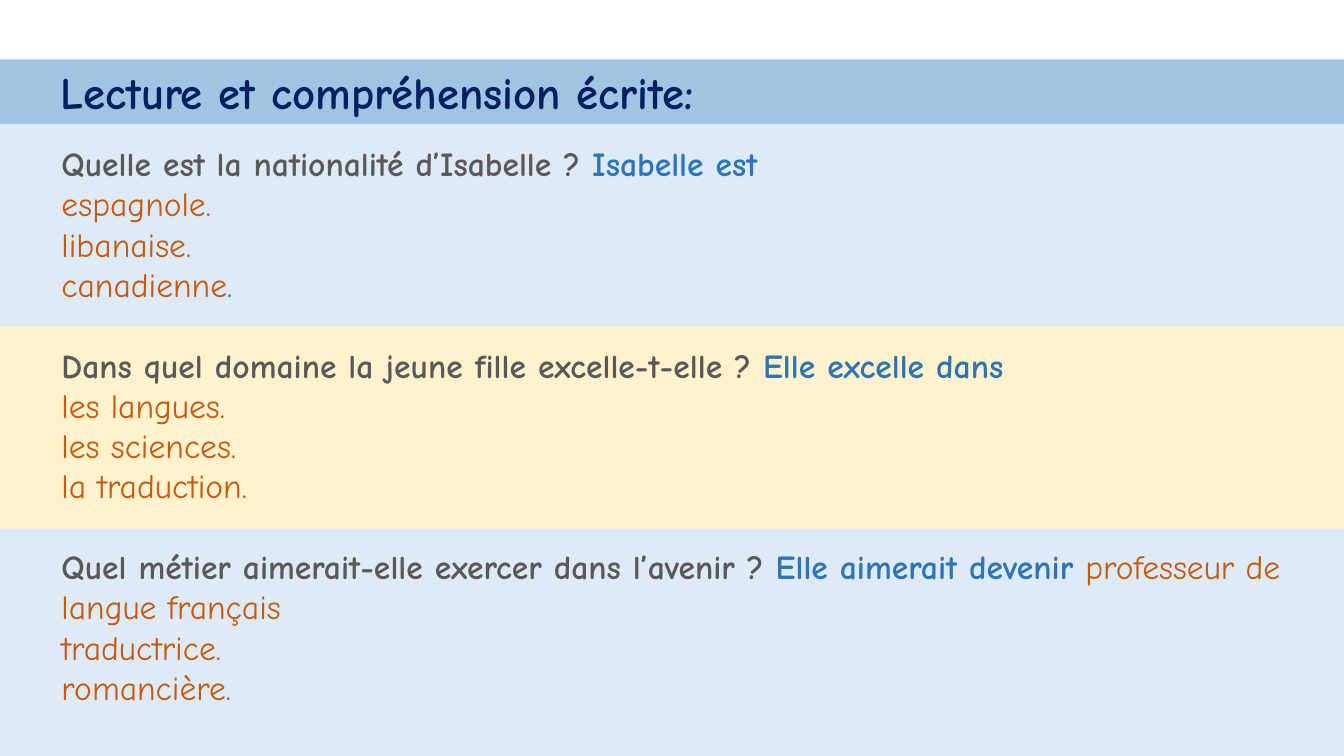
from pptx import Presentation
from pptx.dml.color import RGBColor
from pptx.enum.shapes import MSO_SHAPE as Shape
from pptx.enum.text import MSO_ANCHOR as Anchor, PP_ALIGN as Align
from pptx.util import Cm, Pt

PALE_BLUE = RGBColor(0xDE, 0xEB, 0xF7)
CREAM = RGBColor(0xFF, 0xF2, 0xCC)
SKY = RGBColor(0xA1, 0xC4, 0xE3)
NAVY = RGBColor(0x00, 0x20, 0x60)
GREY = RGBColor(0x59, 0x59, 0x59)
BLUE = RGBColor(0x2E, 0x75, 0xB6)
ORANGE = RGBColor(0xC5, 0x5A, 0x11)

WIDTH, HEIGHT = 33.87, 19.05
BAND_TOP, BAND_STEP = 3.12, 5.1
TEXT_TOP, TEXT_STEP = 3.35, 5.08
FRAME = {"word_wrap": True, "margin_left": Cm(1.52), "margin_right": Cm(0.25),
         "margin_top": Cm(0.25), "margin_bottom": Cm(0.25)}

# Each question is a list of lines; each line a list of (text, colour, bold)
QUESTIONS = [
    (PALE_BLUE, [
        [("Quelle est la nationalité d’Isabelle ? ", GREY, True),
         ("Isabelle est", BLUE, True)],
        [("espagnole.", ORANGE, False)],
        [("libanaise.", ORANGE, False)],
        [("canadienne", ORANGE, False), (".", BLUE, False)]]),
    (CREAM, [
        [("Dans quel domaine la jeune fille excelle-t-elle ? ", GREY, True),
         ("Elle excelle dans", BLUE, True)],
        [("les langues.", ORANGE, False)],
        [("les sciences.", ORANGE, False)],
        [("la traduction.", ORANGE, False)]]),
    (PALE_BLUE, [
        [("Quel métier aimerait-elle exercer dans l’avenir ? ", GREY, True),
         ("Elle aimerait devenir ", BLUE, True),
         ("professeur de langue français", ORANGE, False)],
        [("traductrice.", ORANGE, False)],
        [("romancière.", ORANGE, False)]]),
]

deck = Presentation()
deck.slide_width, deck.slide_height = Cm(WIDTH), Cm(HEIGHT)
page = deck.slides.add_slide(deck.slide_layouts[6])


def add_band(top, height, colour):
    band = page.shapes.add_shape(Shape.RECTANGLE, 0, Cm(top), Cm(WIDTH), Cm(height))
    band.shadow.inherit = False
    band.fill.solid()
    band.fill.fore_color.rgb = colour
    band.line.fill.background()
    return band


def write_lines(box, lines, size, anchor):
    frame = box.text_frame
    for name, value in {**FRAME, "vertical_anchor": anchor}.items():
        setattr(frame, name, value)
    for number, line in enumerate(lines):
        para = frame.add_paragraph() if number else frame.paragraphs[0]
        para.alignment = Align.LEFT
        for text, colour, bold in line:
            span = para.add_run()
            span.text = text
            span.font.color.rgb = colour
            for name, value in {"name": "Comic Neue", "size": Pt(size), "bold": bold}.items():
                setattr(span.font, name, value)


# Question bands, the last one reaching the bottom edge
for row, (colour, lines) in enumerate(QUESTIONS):
    top = BAND_TOP + row * BAND_STEP
    is_last = row == len(QUESTIONS) - 1
    add_band(top, HEIGHT - top if is_last else BAND_STEP, colour)
    box = page.shapes.add_textbox(Cm(0.03), Cm(TEXT_TOP + row * TEXT_STEP), Cm(33.1), Cm(4.6))
    write_lines(box, lines, 24, Anchor.TOP)

# Title band
title = add_band(1.5, 1.63, SKY)
write_lines(title, [[("Lecture et compréhension écrite:", NAVY, True)]], 32, Anchor.MIDDLE)

deck.save("out.pptx")
